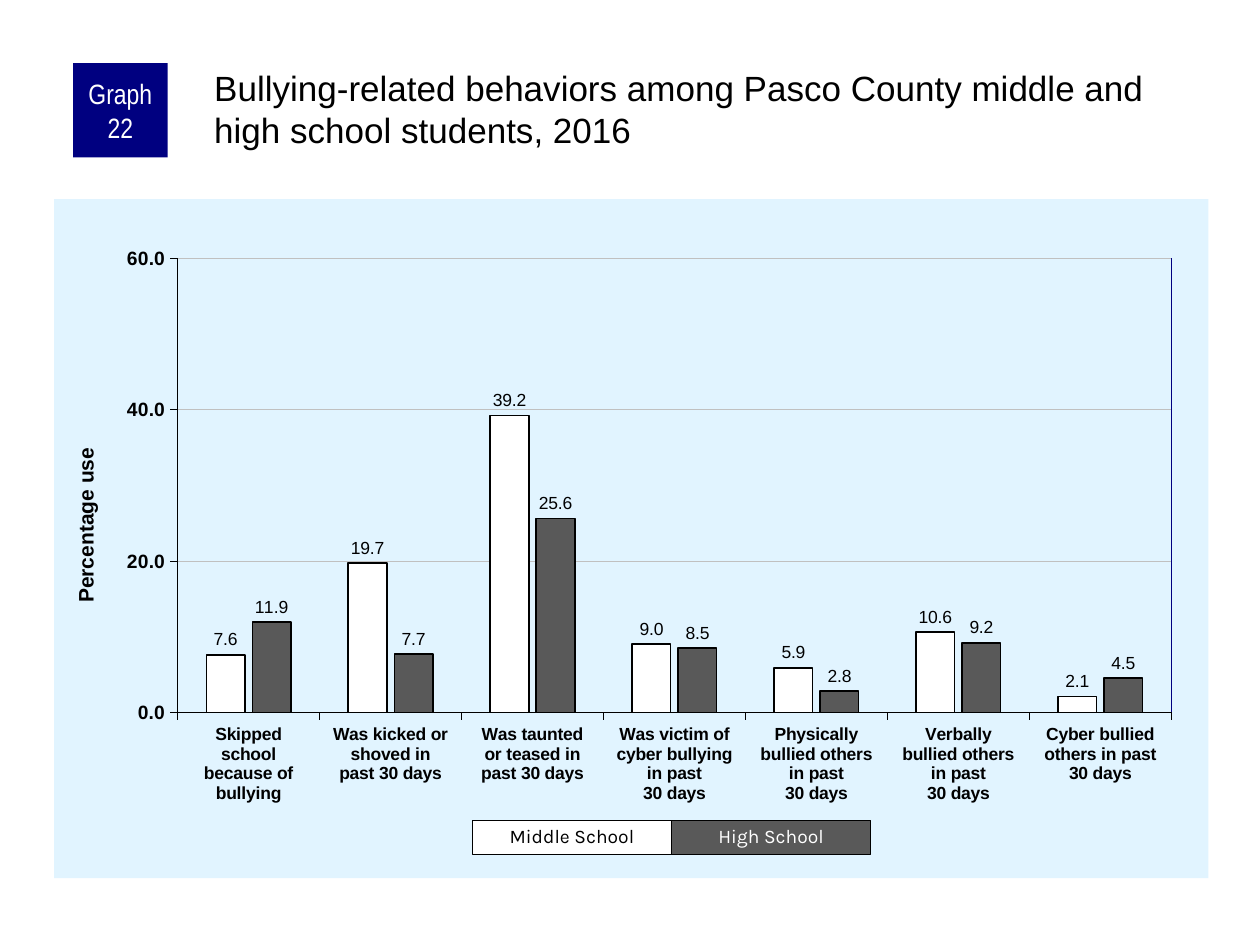
from lxml import etree
from pptx import Presentation
from pptx import util as u
from pptx.chart.data import CategoryChartData
from pptx.dml.color import RGBColor
from pptx.enum import chart as ch, shapes, text
from pptx.oxml import parse_xml
from pptx.oxml.ns import nsdecls, qn

BLACK = RGBColor(0x00, 0x00, 0x00)
WHITE = RGBColor(0xFF, 0xFF, 0xFF)
NAVY = RGBColor(0x00, 0x00, 0x80)
GRAY = RGBColor(0x59, 0x59, 0x59)
GRID = RGBColor(0xC0, 0xC0, 0xC0)
PALE_BLUE = RGBColor(0xE1, 0xF4, 0xFF)

CHART_BOX = (0.43, 1.58, 9.16, 5.39)
PLOT = {"x": 0.107, "y": 0.087, "w": 0.861, "h": 0.669}
BEHAVIORS = [
    ("Skipped\nschool\nbecause of\nbullying", 7.6, 11.9),
    ("Was kicked or\nshoved in\npast 30 days", 19.7, 7.7),
    ("Was taunted\nor teased in\npast 30 days", 39.2, 25.6),
    ("Was victim of\ncyber bullying\nin past\n30 days", 9.0, 8.5),
    ("Physically\nbullied others\nin past\n30 days", 5.9, 2.8),
    ("Verbally\nbullied others\nin past\n30 days", 10.6, 9.2),
    ("Cyber bullied\nothers in past\n30 days", 2.1, 4.5),
]
# school level, bar fill, legend text colour
SCHOOLS = [("Middle School", WHITE, BLACK), ("High School", GRAY, WHITE)]


def style_font(font, size, color=BLACK, name="Arial", bold=False):
    font.size, font.name, font.bold = u.Pt(size), name, bold
    font.color.rgb = color


def style_line(line, color, width):
    line.color.rgb, line.width = color, u.Pt(width)


def write(frame, words, insets, align=text.PP_ALIGN.LEFT,
          anchor=text.MSO_ANCHOR.TOP, spacing=None, **font):
    """Put one formatted paragraph in a text frame."""
    frame.word_wrap = True
    frame.vertical_anchor = anchor
    (frame.margin_left, frame.margin_top,
     frame.margin_right, frame.margin_bottom) = map(u.Inches, insets)
    paragraph = frame.paragraphs[0]
    paragraph.alignment, paragraph.line_spacing = align, spacing
    run = paragraph.add_run()
    run.text = words
    style_font(run.font, **font)


class GraphSlide:
    def __init__(self, presentation):
        self.shapes = presentation.slides.add_slide(
            presentation.slide_layouts[6]).shapes

    def label(self, box, words, **style):
        frame = self.shapes.add_textbox(*map(u.Inches, box)).text_frame
        write(frame, words, **style)

    def block(self, box, words, fill, outline=None, **style):
        block = self.shapes.add_shape(
            shapes.MSO_SHAPE.RECTANGLE, *map(u.Inches, box))
        block.shadow.inherit = False
        block.fill.solid()
        block.fill.fore_color.rgb = fill
        if outline is None:
            block.line.fill.background()
        else:
            style_line(block.line, outline, 0.75)
        write(block.text_frame, words, align=text.PP_ALIGN.CENTER,
              anchor=text.MSO_ANCHOR.MIDDLE, **style)

    def vertical_rule(self, x, top, bottom, color, width):
        rule = self.shapes.add_connector(
            shapes.MSO_CONNECTOR.STRAIGHT,
            *map(u.Inches, (x, top, x, bottom)))
        style_line(rule.line, color, width)
        etree.SubElement(rule.element.spPr, qn("a:effectLst"))

    def column_chart(self, box):
        data = CategoryChartData(number_format="0.0")
        data.categories = [row[0] for row in BEHAVIORS]
        for column, (school, _, _) in enumerate(SCHOOLS, start=1):
            data.add_series(school, [row[column] for row in BEHAVIORS])
        chart = self.shapes.add_chart(
            ch.XL_CHART_TYPE.COLUMN_CLUSTERED, *map(u.Inches, box), data).chart
        chart.has_legend = chart.has_title = False
        style_font(chart.font, 11.5)
        self._place_plot(chart)
        self._style_axes(chart)

        plot = chart.plots[0]
        plot.gap_width, plot.overlap = 150, -20
        plot.vary_by_categories = False
        for series, (_, fill, _) in zip(plot.series, SCHOOLS):
            series.format.fill.solid()
            series.format.fill.fore_color.rgb = fill
            style_line(series.format.line, BLACK, 1)
            labels = series.data_labels
            labels.show_value = True
            labels.position = ch.XL_LABEL_POSITION.OUTSIDE_END
            labels.number_format = "0.0"
            labels.number_format_is_linked = False
            style_font(labels.font, 10)

    def _place_plot(self, chart):
        """Fix the inner plot area and fill the chart background."""
        sizes = "".join(f'<c:{k} val="{v}"/>' for k, v in PLOT.items())
        layout = parse_xml(
            f'<c:layout {nsdecls("c")}><c:manualLayout>'
            '<c:layoutTarget val="inner"/>'
            '<c:xMode val="edge"/><c:yMode val="edge"/>'
            f'{sizes}</c:manualLayout></c:layout>')
        space = chart.element
        area = space.chart.plotArea
        for default in area.findall(qn("c:layout")):
            area.remove(default)
        area.insert(0, layout)
        space.chart.addnext(parse_xml(
            f'<c:spPr {nsdecls("c", "a")}><a:solidFill>'
            f'<a:srgbClr val="{PALE_BLUE}"/></a:solidFill>'
            '<a:ln><a:noFill/></a:ln></c:spPr>'))

    def _style_axes(self, chart):
        percent = chart.value_axis
        for axis, size in ((chart.category_axis, 10), (percent, 11)):
            axis.major_tick_mark = ch.XL_TICK_MARK.OUTSIDE
            style_line(axis.format.line, BLACK, 0.25)
            style_font(axis.tick_labels.font, size, bold=True)
        percent.minimum_scale, percent.maximum_scale = 0, 60
        percent.major_unit = 20
        percent.tick_labels.number_format = "0.0"
        percent.tick_labels.number_format_is_linked = False
        style_line(percent.major_gridlines.format.line, GRID, 0.25)
        title = percent.axis_title.text_frame
        title.text = "Percentage use"
        style_font(title.paragraphs[0].runs[0].font, 12, bold=True)


def main():
    presentation = Presentation()
    presentation.slide_width = u.Inches(10)
    presentation.slide_height = u.Inches(7.5)
    slide = GraphSlide(presentation)

    slide.column_chart(CHART_BOX)
    left, top, width, height = CHART_BOX
    plot_right = left + width * (PLOT["x"] + PLOT["w"])
    plot_top = top + height * PLOT["y"]
    slide.vertical_rule(plot_right, plot_top,
                        plot_top + height * PLOT["h"], NAVY, 1)

    slide.block((0.58, 0.5, 0.75, 0.75), "Graph 22", NAVY,
                insets=(0.05, 0, 0.05, 0), size=16, color=WHITE,
                name="Arial Narrow")
    slide.label((1.67, 0.5, 7.92, 0.83),
                "Bullying-related behaviors among Pasco County middle and "
                "high school students, 2016",
                insets=(0.03, 0.03, 0, 0), size=20)

    key_width = 1.58
    for index, (school, fill, ink) in enumerate(SCHOOLS):
        slide.block((3.75 + index * key_width, 6.51, key_width, 0.27),
                    school, fill, outline=BLACK,
                    insets=(0.1, 0.05, 0.1, 0.05), spacing=0.9,
                    size=11, color=ink, name="Karla")
    presentation.save("out.pptx")


if __name__ == "__main__":
    main()
